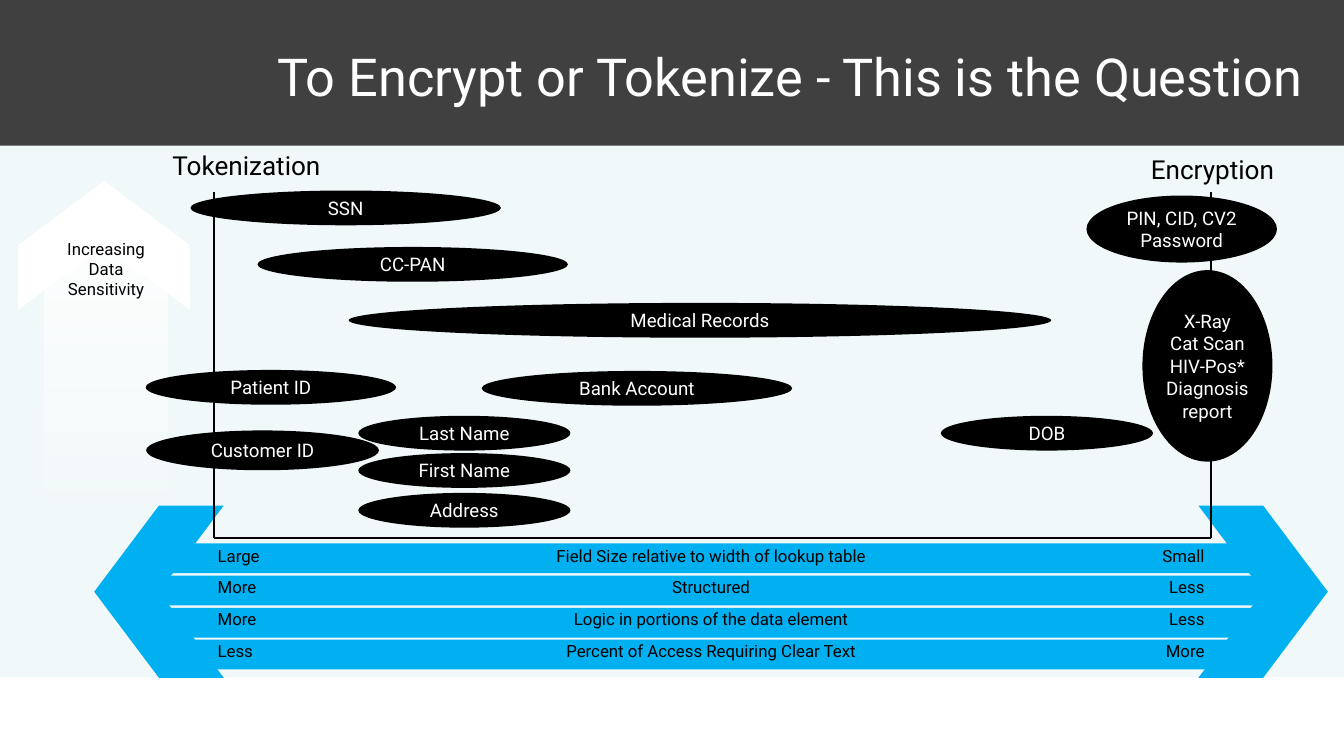
from lxml import etree
from pptx import Presentation
from pptx.dml.color import RGBColor
from pptx.enum.shapes import MSO_CONNECTOR, MSO_SHAPE
from pptx.enum.text import MSO_ANCHOR, MSO_AUTO_SIZE, PP_ALIGN
from pptx.oxml.ns import qn
from pptx.util import Inches, Pt

RECT, CHEVRON, OVAL = MSO_SHAPE.RECTANGLE, MSO_SHAPE.CHEVRON, MSO_SHAPE.OVAL
LEFT, CENTER, RIGHT = PP_ALIGN.LEFT, PP_ALIGN.CENTER, PP_ALIGN.RIGHT
STRAIGHT = MSO_CONNECTOR.STRAIGHT
MIDDLE = MSO_ANCHOR.MIDDLE
GROW = MSO_AUTO_SIZE.SHAPE_TO_FIT_TEXT

WHITE = RGBColor(0xFF, 0xFF, 0xFF)
BLACK = RGBColor(0x00, 0x00, 0x00)
BLUE = RGBColor(0x00, 0xB0, 0xF0)
PALE = RGBColor(0xF0, 0xF8, 0xF9)
DARK = RGBColor(0x40, 0x40, 0x40)
FONT = "Roboto"
WIDTH, HEIGHT = 26.67, 15
AXIS_LEFT, AXIS_RIGHT, AXIS_TOP, AXIS_BOTTOM = 4.25, 24.03, 3.8, 10.67

SCALES = [
    ("Large", "Field Size relative to width of lookup table", "Small"),
    ("More", "Structured", "Less"),
    ("More", "Logic in portions of the data element", "Less"),
    ("Less", "Percent of Access Requiring Clear Text", "More"),
]
BARS = [(2.89, 10.78, 22.44), (2.89, 11.42, 22.44),
        (2.89, 12.06, 22.44), (3.56, 12.69, 21.11)]
DATA_ITEMS = [
    ("CC-PAN", 5.11, 4.9, 6.16, 0.69),
    ("SSN", 3.78, 3.78, 6.16, 0.69),
    ("Patient ID", 2.89, 7.34, 4.97, 0.69),
    ("Customer ID", 2.9, 8.54, 4.62, 0.79),
    ("Bank Account", 9.56, 7.36, 6.16, 0.69),
    ("Medical Records", 6.92, 6.01, 13.94, 0.69),
    ("DOB", 18.67, 8.25, 4.21, 0.69),
    ("PIN, CID, CV2\nPassword", 21.56, 3.88, 3.78, 1.33),
    ("X-Ray\nCat Scan\nHIV-Pos*\nDiagnosis\nreport", 22.67, 5.36, 2.58, 3.8),
    ("Last Name", 7.11, 8.25, 4.21, 0.69),
    ("First Name", 7.11, 8.99, 4.21, 0.69),
    ("Address", 7.11, 9.78, 4.21, 0.69),
]


def write_text(tf, text, size=24, color=BLACK, align=CENTER, spacing=None):
    """Write one formatted paragraph for each line of text."""
    for i, line in enumerate(text.split("\n")):
        p = tf.paragraphs[0] if i == 0 else tf.add_paragraph()
        p.alignment = align
        if spacing:
            p.line_spacing = spacing
        r = p.add_run()
        r.text = line
        r.font.name = FONT
        r.font.size = Pt(size)
        r.font.color.rgb = color


def add_label(s, text, x, y, w, h, **fmt):
    """Add a wrapping text box."""
    tf = s.shapes.add_textbox(Inches(x), Inches(y), Inches(w), Inches(h)).text_frame
    tf.word_wrap = True
    tf.auto_size = GROW
    write_text(tf, text, **fmt)


def add_block(s, kind, x, y, w, h, color, rotation=0):
    """Add a plain filled shape without outline."""
    sp = s.shapes.add_shape(kind, Inches(x), Inches(y), Inches(w), Inches(h))
    sp.shadow.inherit = False
    sp.fill.solid()
    sp.fill.fore_color.rgb = color
    sp.line.fill.background()
    sp.rotation = rotation
    return sp


def add_fading_stem(s, x, y, w, h):
    """Add a white block that fades out downwards."""
    sp = add_block(s, RECT, x, y, w, h, WHITE)
    sp.fill.gradient()
    sp.fill.gradient_angle = 270
    for stop in sp.fill.gradient_stops:
        stop.color.rgb = WHITE
    last_color = list(sp._element.spPr.iter(qn("a:srgbClr")))[-1]
    etree.SubElement(last_color, qn("a:alpha")).set("val", "0")


def add_data_item(s, text, x, y, w, h):
    """Add a black ellipse naming a kind of data."""
    sp = add_block(s, OVAL, x, y, w, h, BLACK)
    tf = sp.text_frame
    tf.word_wrap = False
    tf.vertical_anchor = MIDDLE
    tf.margin_left = tf.margin_right = Inches(0.2)
    tf.margin_top = tf.margin_bottom = Inches(0.1)
    write_text(tf, text, size=26.7, color=WHITE)


def add_axis(s, x1, y1, x2, y2):
    """Add a black frame line."""
    c = s.shapes.add_connector(STRAIGHT, Inches(x1), Inches(y1), Inches(x2), Inches(y2))
    c.line.color.rgb = BLACK
    c.line.width = Pt(2.25)
    etree.SubElement(c._element.spPr, qn("a:effectLst"))


def main():
    """Build the slide and save it."""
    prs = Presentation()
    prs.slide_width, prs.slide_height = Inches(WIDTH), Inches(HEIGHT)
    s = prs.slides.add_slide(prs.slide_layouts[6])

    add_block(s, RECT, 0, 0, WIDTH, 13.44, PALE)
    add_fading_stem(s, 0.89, 4.69, 2.44, 6.08)
    add_block(s, CHEVRON, 0.78, 3.16, 2.57, 3.42, WHITE, rotation=270)
    add_block(s, CHEVRON, 1.87, 10.03, 2.57, 3.42, BLUE, rotation=180)
    add_block(s, CHEVRON, 23.78, 10.03, 2.57, 3.42, BLUE)
    for x, y, w in BARS:
        add_block(s, RECT, x, y, w, 0.59, BLUE)

    add_block(s, RECT, 0, 0, WIDTH, 2.89, DARK)
    add_label(s, "To Encrypt or Tokenize - This is the Question",
              4.67, 1.06, 22, 1.13, size=74.7, color=WHITE, spacing=0.8)
    add_label(s, "Tokenization", 1.89, 2.92, 6, 0.73, size=37.3)
    add_label(s, "Encryption", 21.45, 3, 5.22, 0.73, size=37.3)

    for x in (AXIS_LEFT, AXIS_RIGHT):
        add_axis(s, x, AXIS_TOP, x, AXIS_BOTTOM)
    add_axis(s, AXIS_LEFT, AXIS_BOTTOM, AXIS_RIGHT, AXIS_BOTTOM)

    add_label(s, "Increasing\nData\nSensitivity", 0.44, 4.69, 3.33, 1.31)
    columns = [(4.22, 4.67, LEFT), (8.06, 12.1, CENTER), (19.33, 4.67, RIGHT)]
    for (x, w, align), words in zip(columns, zip(*SCALES)):
        add_label(s, "\n".join(words), x, 10.54, w, 2.56,
                  align=align, spacing=Pt(45.3))

    for item in DATA_ITEMS:
        add_data_item(s, *item)
    prs.save("out.pptx")


if __name__ == "__main__":
    main()
